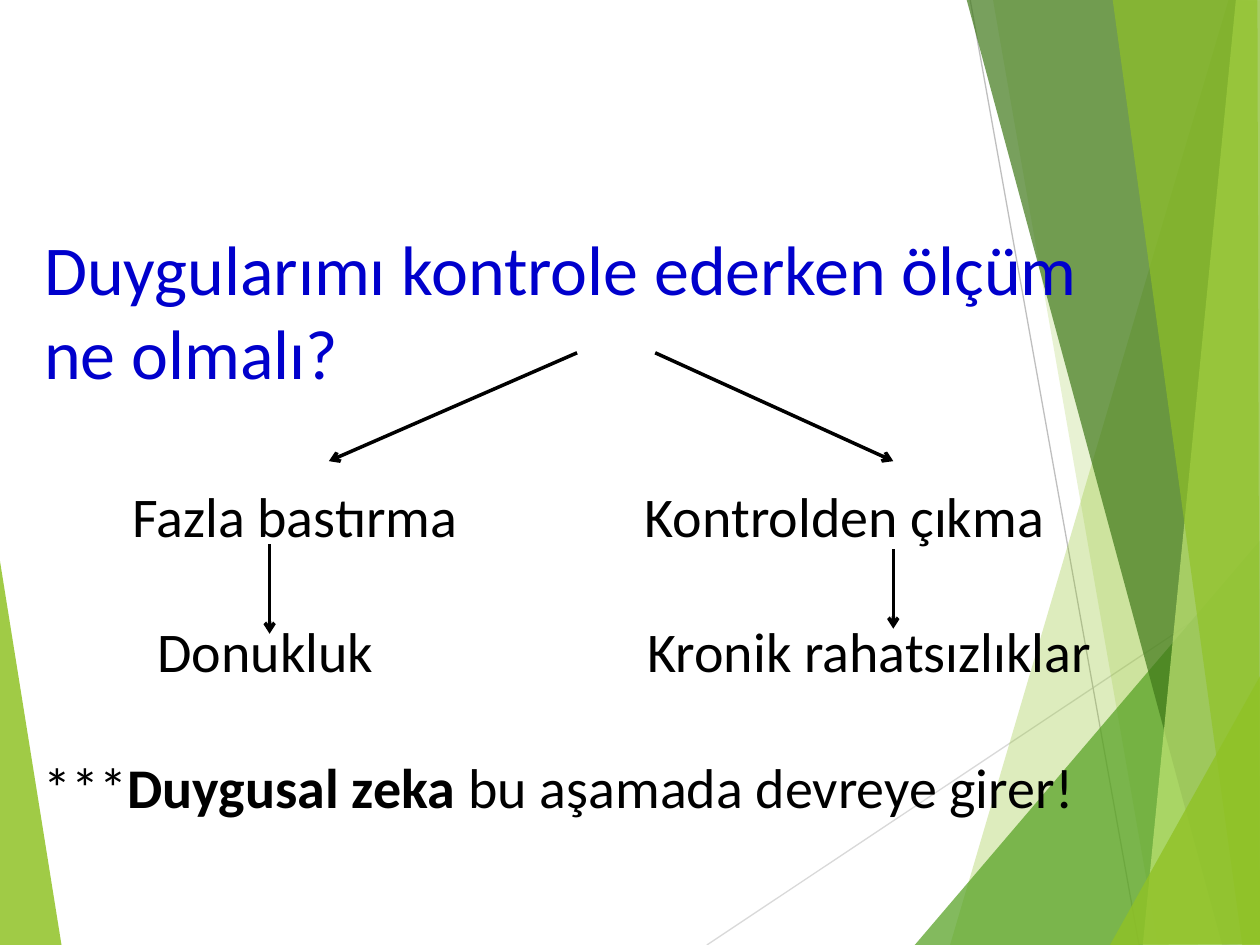
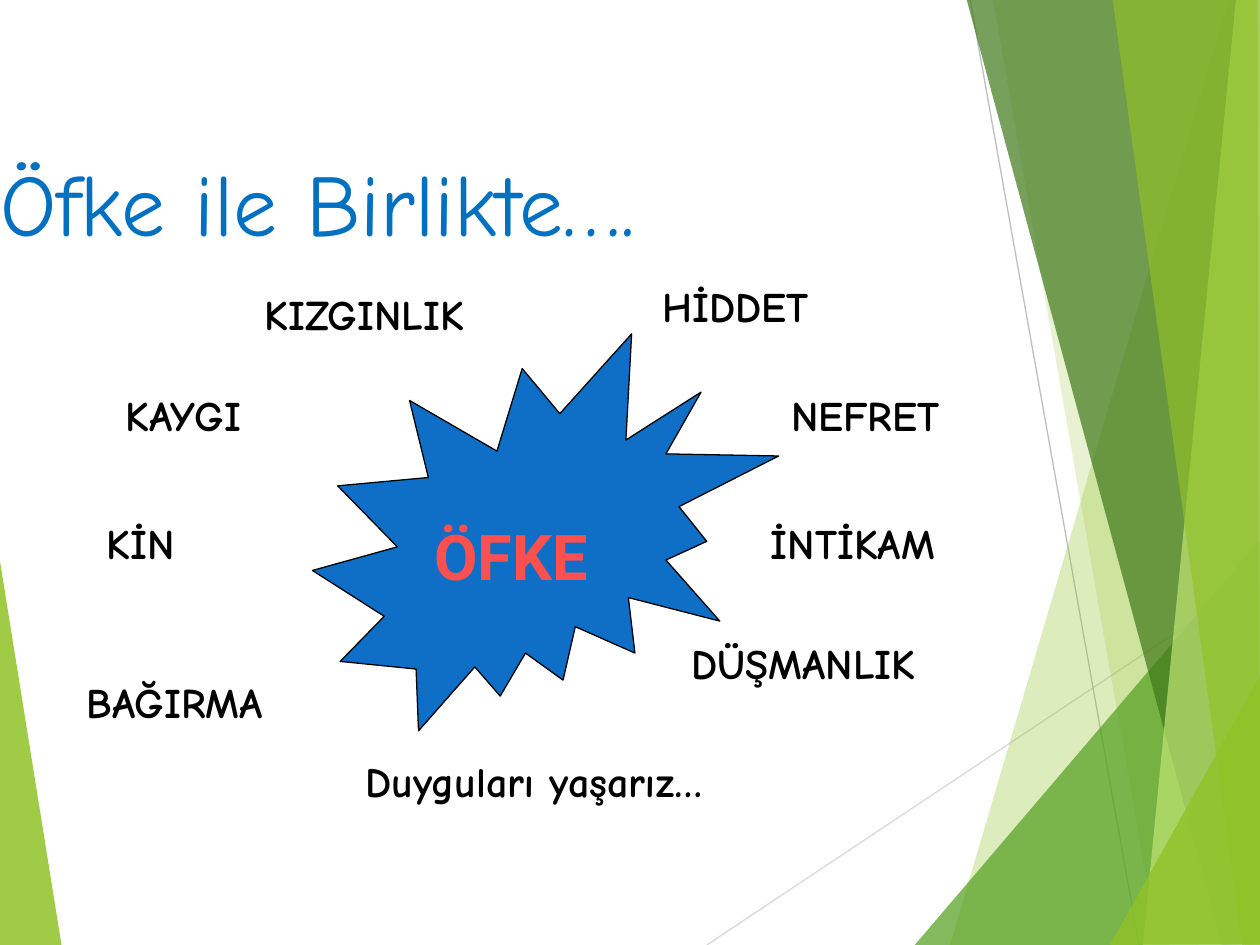
from lxml import etree
from pptx import Presentation
from pptx.dml.color import RGBColor
from pptx.enum.shapes import MSO_CONNECTOR as Connector, MSO_SHAPE as Preset
from pptx.enum.text import MSO_ANCHOR as Anchor, MSO_AUTO_SIZE as AutoSize, PP_ALIGN as Align
from pptx.oxml.ns import qn
from pptx.util import Inches, Pt

COLORS = {
    "lime": "90C226", "green": "54A021", "forest": "3F7819", "pale": "C0E474",
    "light_gray": "D9D9D9", "gray": "BFBFBF", "black": "000000",
    "heading": "0000CC", "title": "0070C0", "burst": "0F6FC6", "anger": "FF5050",
}
RGB = {name: RGBColor.from_string(value) for name, value in COLORS.items()}

HEADING = {"name": "Calibri", "size": Pt(40), "bold": False}
BODY = {"name": "Calibri", "size": Pt(32)}
TITLE = {"name": "Comic Neue", "size": Pt(50), "bold": False}
LABEL = {"name": "Comic Neue", "size": Pt(24), "bold": True}
ANGER = {"name": "Roboto", "size": Pt(36), "bold": True}


def format_text(shape, box, text, font_values, color, frame_values={}):
    shape.left, shape.top, shape.width, shape.height = map(Inches, box)
    frame = shape.text_frame
    frame.text = text
    defaults = {"word_wrap": True, "auto_size": AutoSize.NONE, "vertical_anchor": Anchor.TOP}
    for name, value in (defaults | frame_values).items():
        setattr(frame, name, value)
    for paragraph in frame.paragraphs:
        paragraph.alignment = Align.LEFT
        for run in paragraph.runs:
            for name, value in font_values.items():
                setattr(run.font, name, value)
            run.font.color.rgb = RGB[color]
    return frame


def add_line(slide, start, end, color, width, arrow=False):
    line = slide.shapes.add_connector(Connector.STRAIGHT, *map(Inches, start + end))
    line.line.color.rgb = RGB[color]
    line.line.width = Pt(width)
    if arrow:
        etree.SubElement(line.line._get_or_add_ln(), qn("a:tailEnd"), type="arrow")
    etree.SubElement(line.element.spPr, qn("a:effectLst"))
    return line


presentation = Presentation()
presentation.slide_width, presentation.slide_height = Inches(10), Inches(7.5)
title_only = presentation.slide_layouts[5]
control_slide = presentation.slides.add_slide(title_only)
anger_slide = presentation.slides.add_slide(title_only)

facets = [
    ("lime", 85, [(-0.01, 4.39), (0.49, 7.51), (-0.01, 7.5)]),
    ("lime", 30, [(9.75, 0), (7.54, 7.5), (10.02, 7.51), (10.01, 0.01)]),
    ("lime", 20, [(7.88, -0.01), (9.19, 7.5), (10.01, 7.5), (10.01, -0.01)]),
    ("green", 72, [(7.26, 7.5), (10, 4.29), (10.01, 7.5)]),
    ("forest", 70, [(7.67, -0.01), (9.7, 7.5), (10.01, 7.49), (10.01, -0.01)]),
    ("pale", 70, [(9.81, -0.01), (9.07, 7.5), (10.01, 7.5), (10, -0.01)]),
    ("lime", 65, [(8.83, -0.01), (9.86, 7.5), (10, 7.5), (9.98, -0.01)]),
    ("lime", 80, [(8.81, 7.5), (10.01, 5.35), (10.01, 7.49)]),
]
decoration = []
for color, opacity, corners in facets:
    points = [(round(x * 100), round(y * 100)) for x, y in corners]
    builder = control_slide.shapes.build_freeform(*points[0], scale=Inches(0.01))
    builder.add_line_segments(points[1:], close=True)
    facet = builder.convert_to_shape()
    facet.shadow.inherit = False
    facet.fill.solid()
    facet.fill.fore_color.rgb = RGB[color]
    facet.line.fill.background()
    color_element = facet.element.spPr.find(".//" + qn("a:srgbClr"))
    etree.SubElement(color_element, qn("a:alpha"), val=str(opacity * 1000))
    decoration.append(facet)
decoration[1:1] = [
    add_line(control_slide, (5.61, 7.5), (10.01, 4.57), "light_gray", 0.75),
    add_line(control_slide, (7.7, 0), (9.04, 7.5), "gray", 0.75),
]
master_tree = presentation.slide_master.element.cSld.spTree
for shape in decoration:
    master_tree.append(shape.element)

format_text(control_slide.shapes.title, (0.25, 1.74, 8.64, 1.46),
            "Duygularımı kontrole ederken ölçüm\nne olmalı?", HEADING, "heading",
            {"word_wrap": False})
for paragraph in control_slide.shapes.title.text_frame.paragraphs:
    paragraph.space_before = Pt(0)

outcomes = [
    "\tFazla bastırma\tKontrolden çıkma",
    "\tDonukluk\tKronik rahatsızlıklar",
    "***",
]
outcome_box = control_slide.shapes.add_textbox(0, 0, 0, 0)
frame = format_text(outcome_box, (0.25, 3.77, 8.64, 2.81), "\n".join(outcomes), BODY, "black")
for text, bold in [("Duygusal zeka", True), (" bu aşamada devreye girer!", False)]:
    run = frame.paragraphs[-1].add_run()
    run.text = text
    for name, value in (BODY | {"bold": bold}).items():
        setattr(run.font, name, value)
    run.font.color.rgb = RGB["black"]
for paragraph, stops in zip(frame.paragraphs, [(0.7, 4.77), (0.9, 4.79)]):
    paragraph.space_after = Pt(39)
    tab_list = etree.SubElement(paragraph._p.get_or_add_pPr(), qn("a:tabLst"))
    for stop in stops:
        etree.SubElement(tab_list, qn("a:tab"), pos=str(Inches(stop)), algn="l")

arrows = [
    ((4.58, 2.8), (2.61, 3.66)),
    ((5.2, 2.8), (7.09, 3.66)),
    ((2.14, 4.32), (2.14, 5.03)),
    ((7.09, 4.36), (7.09, 4.99)),
]
for start, end in arrows:
    add_line(control_slide, start, end, "black", 0, arrow=True)

format_text(anger_slide.shapes.title, (0, 0.77, 9, 1.25), "Öfke ile Birlikte….", TITLE, "title",
            {"vertical_anchor": Anchor.BOTTOM, "margin_left": 0, "margin_right": 0,
             "margin_bottom": 0})

burst = anger_slide.shapes.add_shape(Preset.EXPLOSION2, *map(Inches, (2.48, 2.65, 3.7, 3.15)))
burst.shadow.inherit = False
burst.fill.solid()
burst.fill.fore_color.rgb = RGB["burst"]
burst.line.color.rgb = RGB["black"]
burst.line.width = Pt(0.75)

feelings = [
    ("KIZGINLIK", 2, 2.24, 3.15),
    ("KAYGI", 0.9, 3.04, 3.15),
    ("KİN", 0.75, 4.06, 3.15),
    ("NEFRET", 6.18, 3.04, 3.15),
    ("DÜŞMANLIK", 5.39, 5.01, 3.15),
    ("İNTİKAM", 6.02, 4.06, 3.15),
    ("BAĞIRMA", 0.59, 5.32, 3.15),
    ("Duyguları yaşarız…", 2.8, 5.95, 4.57),
    ("HİDDET", 5.16, 2.18, 3.15),
]
for text, left, top, width in feelings:
    label = anger_slide.shapes.add_textbox(0, 0, 0, 0)
    format_text(label, (left, top, width, 0.64), text, LABEL, "black")

anger_box = anger_slide.shapes.add_textbox(0, 0, 0, 0)
format_text(anger_box, (3.35, 4.06, 2.05, 0.7), "ÖFKE", ANGER, "anger")

presentation.save("out.pptx")
